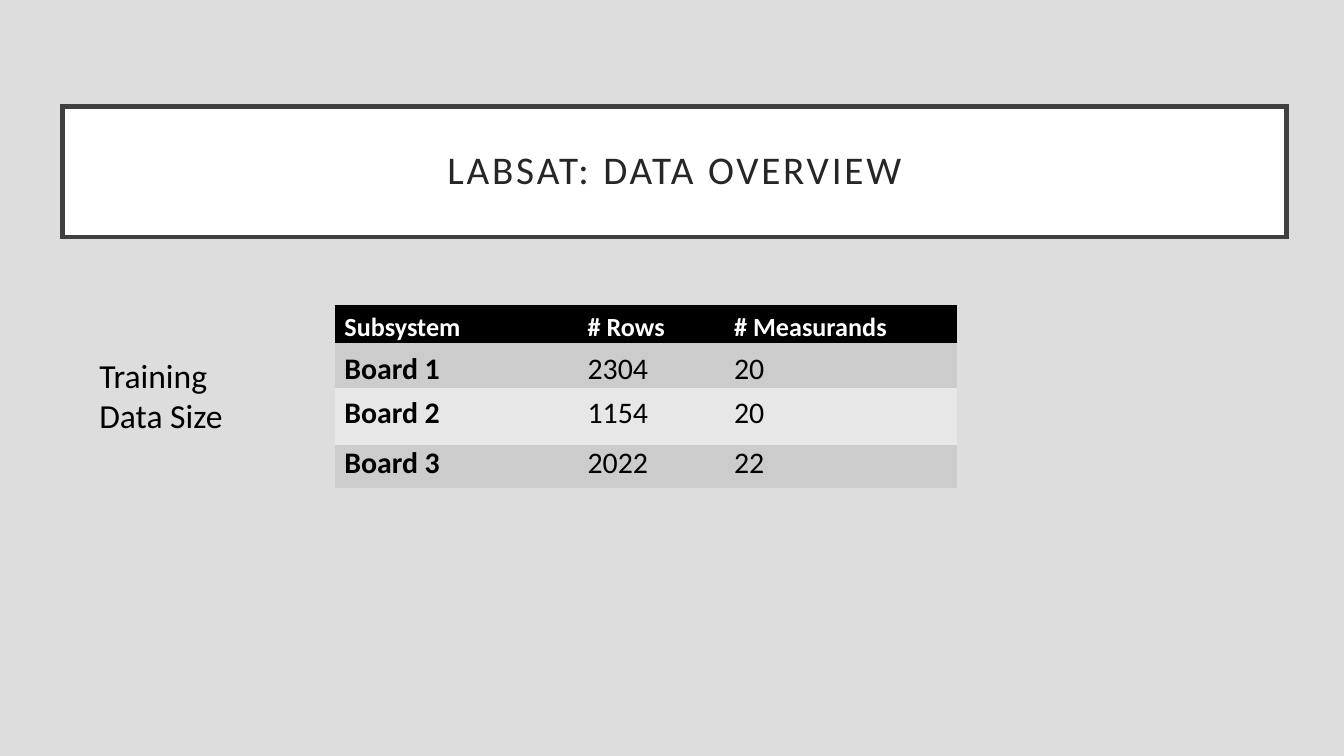
from dataclasses import dataclass
from typing import Any

from lxml.etree import SubElement
from pptx import Presentation
from pptx.dml.color import RGBColor
from pptx.enum.shapes import MSO_SHAPE
from pptx.enum.text import MSO_ANCHOR, MSO_AUTO_SIZE, PP_ALIGN
from pptx.oxml.ns import qn
from pptx.util import Inches, Pt

SLIDE_WIDTH = Inches(10)
SLIDE_HEIGHT = SLIDE_WIDTH * 9 // 16
PLAIN_TABLE_STYLE = "{2D5ABB26-0587-4C30-8999-92F81FD0307C}"
COLORS = {
    "background": "DDDDDD",
    "white": "FFFFFF",
    "black": "000000",
    "frame": "404040",
    "title": "262626",
    "odd_row": "CCCCCC",
    "even_row": "E7E7E7",
}


@dataclass(frozen=True)
class Area:
    left: float
    top: float
    width: float
    height: float

    def lengths(self) -> tuple[int, int, int, int]:
        return across(self.left), down(self.top), across(self.width), down(self.height)


@dataclass(frozen=True)
class TextStyle:
    size: float
    color: str
    bold: bool = False
    tracking: int = 0


@dataclass(frozen=True)
class TableRow:
    values: tuple[str, str, str]
    height: float
    fill: str
    size: float
    color: str
    paragraph: dict[str, Any]
    all_bold: bool = False


BODY_FORMAT = {"space_after": Pt(4), "line_spacing": 1.2}
HEADER_FORMAT = {"alignment": PP_ALIGN.JUSTIFY, "space_after": Pt(10), "line_spacing": 1.2}
LAST_FORMAT = {"space_after": Pt(4)}
COLUMN_WIDTHS = (18.1, 10.9, 17.3)
TABLE_ROWS = (
    TableRow(("Subsystem", "# Rows", "# Measurands"), 4.44, "black", 14, "white", HEADER_FORMAT, True),
    TableRow(("Board 1", "2304", "20"), 5.87, "odd_row", 16, "black", BODY_FORMAT),
    TableRow(("Board 2", "1154", "20"), 7.64, "even_row", 16, "black", BODY_FORMAT),
    TableRow(("Board 3", "2022", "22"), 5.69, "odd_row", 16, "black", LAST_FORMAT),
)


def across(percent: float) -> int:
    return round(SLIDE_WIDTH * percent / 100)


def down(percent: float) -> int:
    return round(SLIDE_HEIGHT * percent / 100)


def color(name: str) -> RGBColor:
    return RGBColor.from_string(COLORS[name])


def paint(fill: Any, name: str) -> None:
    fill.solid()
    fill.fore_color.rgb = color(name)


def apply_format(target: Any, values: dict[str, Any]) -> None:
    for name, value in values.items():
        setattr(target, name, value)


def write_text(frame: Any, text: str, style: TextStyle, paragraph: dict[str, Any]) -> None:
    para = frame.paragraphs[0]
    apply_format(para, paragraph)
    span = para.add_run()
    span.text = text
    apply_format(span.font, {"name": "Calibri", "size": Pt(style.size), "bold": style.bold})
    span.font.color.rgb = color(style.color)
    if style.tracking:
        span.font._element.set("spc", str(style.tracking))


def draw_title(page: Any, text: str, area: Area) -> None:
    box = page.shapes.add_shape(MSO_SHAPE.RECTANGLE, *area.lengths())
    box.shadow.inherit = False
    paint(box.fill, "white")
    box.line.color.rgb = color("frame")
    box.line.width = Pt(2.5)
    SubElement(box._element.spPr.find(qn("a:ln")), qn("a:miter"), lim="800000")
    margins = dict.fromkeys(("margin_left", "margin_top", "margin_right", "margin_bottom"), Inches(0.2))
    apply_format(box.text_frame, {"word_wrap": True, "vertical_anchor": MSO_ANCHOR.MIDDLE, **margins})
    style = TextStyle(21, "title", tracking=150)
    write_text(box.text_frame, text, style, {"alignment": PP_ALIGN.CENTER, "line_spacing": 0.9})


def draw_table(page: Any, rows: tuple[TableRow, ...], area: Area) -> None:
    frame = page.shapes.add_table(len(rows), len(COLUMN_WIDTHS), *area.lengths())
    table = frame.table
    frame._element.find(f".//{qn('a:tableStyleId')}").text = PLAIN_TABLE_STYLE
    for column, width in zip(table.columns, COLUMN_WIDTHS):
        column.width = across(width)
    margins = {
        "margin_left": Inches(0.07),
        "margin_right": Inches(0.07),
        "margin_top": 0,
        "margin_bottom": 0,
    }
    for row_index, row in enumerate(rows):
        table.rows[row_index].height = down(row.height)
        for column_index, value in enumerate(row.values):
            cell = table.cell(row_index, column_index)
            apply_format(cell, margins)
            paint(cell.fill, row.fill)
            style = TextStyle(row.size, row.color, row.all_bold or column_index == 0)
            write_text(cell.text_frame, value, style, row.paragraph)


def draw_label(page: Any, text: str, area: Area) -> None:
    box = page.shapes.add_textbox(*area.lengths())
    apply_format(box.text_frame, {"word_wrap": True, "auto_size": MSO_AUTO_SIZE.SHAPE_TO_FIT_TEXT})
    write_text(box.text_frame, text, TextStyle(18, "black"), {"alignment": PP_ALIGN.LEFT})


def main() -> None:
    deck = Presentation()
    apply_format(deck, {"slide_width": SLIDE_WIDTH, "slide_height": SLIDE_HEIGHT})
    page = deck.slides.add_slide(deck.slide_layouts[6])
    paint(page.background.fill, "background")
    draw_title(page, "LABSAT: DATA OVERVIEW", Area(4.64, 14.06, 91.1, 17.3))
    draw_table(page, TABLE_ROWS, Area(24.93, 40.36, 46.3, 23.64))
    draw_label(page, "Training Data Size", Area(6.4, 46.04, 14.2, 12.62))
    deck.save("out.pptx")


if __name__ == "__main__":
    main()
